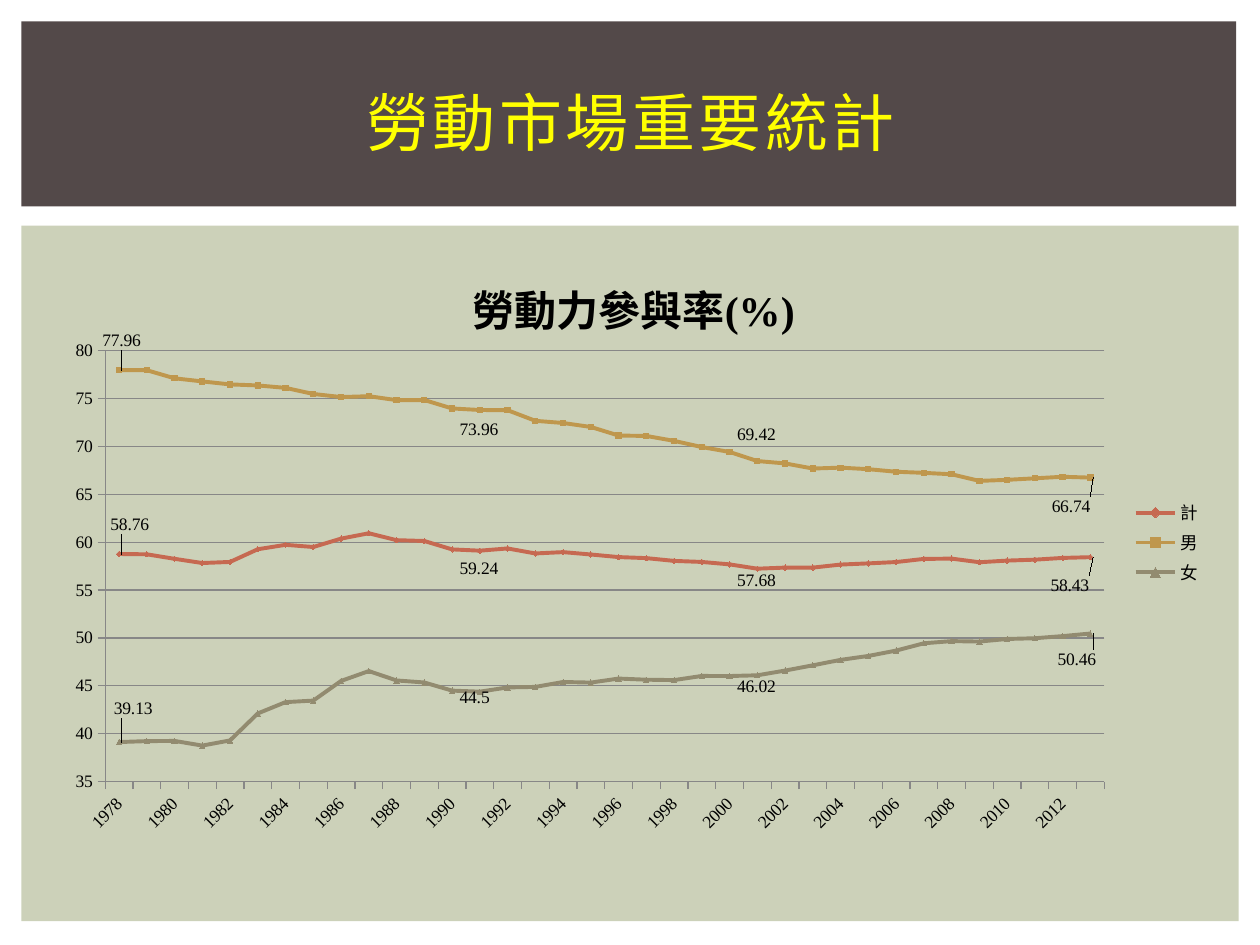
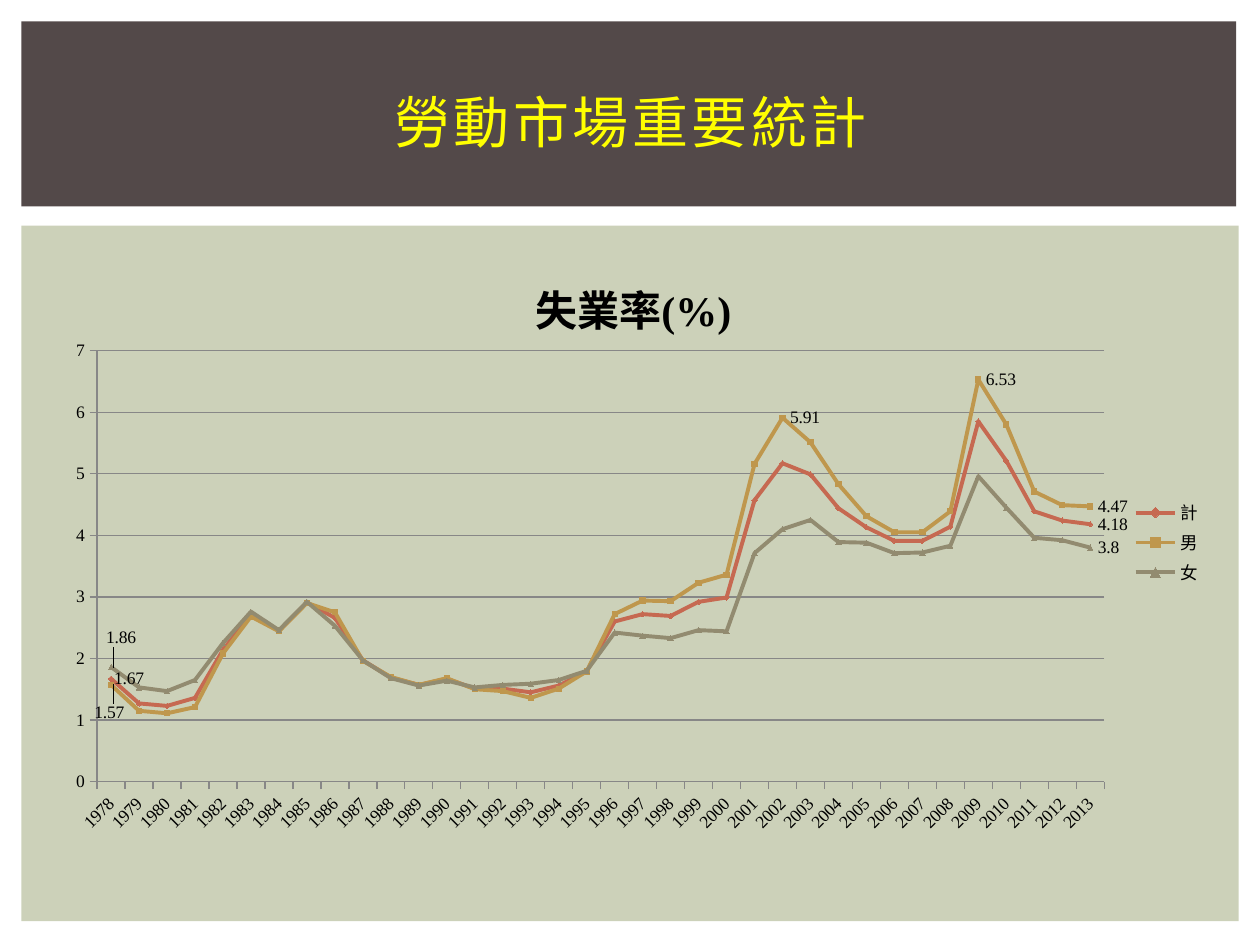
"""Builds two slides on labour market statistics, each with one line chart."""
from dataclasses import dataclass
from typing import NamedTuple

from lxml import etree
from pptx import Presentation
from pptx import util as u
from pptx.chart import data as chart_data
from pptx.dml import color
from pptx.enum import chart as ch, shapes, text
from pptx.oxml import ns, parse_xml

COLORS = {
    "header": "534949", "panel": "CCD1B9", "heading": "FFFF00", "ink": "000000",
    "grid": "878787", "total": "C66951", "men": "BF974D", "women": "928B70",
}
HEADING_FONT = "Noto Sans CJK SC"
CHART_FONT = "Times New Roman"
HEADING = "勞動市場重要統計"
FIRST_YEAR, LAST_YEAR = 1978, 2013


class Box(NamedTuple):
    """A position and size in centimetres."""
    left: float
    top: float
    width: float
    height: float

    def lengths(self) -> list[u.Cm]:
        """Return the four values as lengths."""
        return [u.Cm(value) for value in self]


class Band(NamedTuple):
    """A coloured background rectangle."""
    box: Box
    fill: str


class Group(NamedTuple):
    """How one part of the population is drawn."""
    name: str
    color: str
    marker: ch.XL_MARKER_STYLE


class Callout(NamedTuple):
    """A value label, moved by percentages of the chart size."""
    year: int
    dx: float = 0
    dy: float = 0


@dataclass
class RateSlide:
    """The content of one statistics slide."""
    heading_size: int
    rate_name: str
    name_left: float
    plot_left: float
    plot_width: float
    low: int
    high: int
    step: int
    year_skip: int
    rates: list[list[float]]
    callouts: list[list[Callout]]


BANDS = [
    Band(Box(0.43, 4.55, 24.54, 14.02), "panel"),
    Band(Box(0.43, 0.43, 24.49, 3.73), "header"),
]
HEADING_BOX = Box(1.07, 0.99, 23.29, 2.92)
CHART_BOX = Box(1.07, 4.78, 23.34, 12.24)
GROUPS = [
    Group("計", "total", ch.XL_MARKER_STYLE.DIAMOND),
    Group("男", "men", ch.XL_MARKER_STYLE.SQUARE),
    Group("女", "women", ch.XL_MARKER_STYLE.TRIANGLE),
]
PARTICIPATION = RateSlide(
    36, "勞動力參與率(%)", 35.6, 4.5, 86.3, 35, 80, 5, 2,
    [
        [58.76, 58.73, 58.26, 57.82, 57.93, 59.26, 59.72, 59.49, 60.37, 60.93, 60.21, 60.12,
         59.24, 59.11, 59.34, 58.82, 58.96, 58.71, 58.44, 58.33, 58.04, 57.93, 57.68, 57.23,
         57.34, 57.34, 57.66, 57.78, 57.92, 58.25, 58.28, 57.9, 58.07, 58.17, 58.35, 58.43],
        [77.96, 77.95, 77.11, 76.78, 76.47, 76.36, 76.11, 75.47, 75.15, 75.24, 74.83, 74.84,
         73.96, 73.8, 73.78, 72.67, 72.44, 72.03, 71.13, 71.09, 70.58, 69.93, 69.42, 68.47,
         68.22, 67.69, 67.78, 67.62, 67.35, 67.24, 67.09, 66.4, 66.51, 66.67, 66.83, 66.74],
        [39.13, 39.23, 39.25, 38.76, 39.3, 42.12, 43.3, 43.46, 45.51, 46.54, 45.56, 45.35,
         44.5, 44.39, 44.83, 44.89, 45.4, 45.34, 45.76, 45.64, 45.6, 46.03, 46.02, 46.1,
         46.59, 47.14, 47.71, 48.12, 48.68, 49.44, 49.67, 49.62, 49.89, 49.97, 50.19, 50.46],
    ],
    [
        [Callout(1978, -1.4, -4.8), Callout(1990, 0, 3.1),
         Callout(2000, 0, 2.6), Callout(2013, -4.1, 4.6)],
        [Callout(1978, -2.1, -4.8), Callout(1990, 0, 3.5),
         Callout(2000, 0, -2.8), Callout(2013, -4, 4.8)],
        [Callout(1978, -1.1, -5.6), Callout(1990, 0, 1.2),
         Callout(2000, 0, 1.8), Callout(2013, -3.5, 4.3)],
    ],
)
UNEMPLOYMENT = RateSlide(
    32, "失業率(%)", 41, 3.8, 87, 0, 7, 1, 1,
    [
        [1.67, 1.27, 1.23, 1.36, 2.14, 2.71, 2.45, 2.91, 2.66, 1.97, 1.69, 1.57,
         1.67, 1.51, 1.51, 1.45, 1.56, 1.79, 2.6, 2.72, 2.69, 2.92, 2.99, 4.57,
         5.17, 4.99, 4.44, 4.13, 3.91, 3.91, 4.14, 5.85, 5.21, 4.39, 4.24, 4.18],
        [1.57, 1.15, 1.11, 1.21, 2.08, 2.68, 2.44, 2.9, 2.75, 1.96, 1.7, 1.57,
         1.68, 1.5, 1.47, 1.36, 1.51, 1.79, 2.72, 2.94, 2.93, 3.23, 3.36, 5.16,
         5.91, 5.51, 4.83, 4.31, 4.05, 4.05, 4.39, 6.53, 5.8, 4.71, 4.49, 4.47],
        [1.86, 1.53, 1.47, 1.65, 2.25, 2.76, 2.46, 2.92, 2.53, 1.97, 1.68, 1.56,
         1.64, 1.53, 1.57, 1.59, 1.65, 1.8, 2.42, 2.37, 2.33, 2.46, 2.44, 3.71,
         4.1, 4.25, 3.89, 3.88, 3.71, 3.72, 3.83, 4.96, 4.45, 3.96, 3.92, 3.8],
    ],
    [
        [Callout(1978, -0.4, 0), Callout(2013)],
        [Callout(1978, -2.1, 4.6), Callout(2002), Callout(2009), Callout(2013)],
        [Callout(1978, -1.1, -4.8), Callout(2013)],
    ],
)


def rgb(name: str) -> color.RGBColor:
    """Return a named colour."""
    return color.RGBColor.from_string(COLORS[name])


def style_font(font, size: int, ink: str, name: str, bold: bool = False) -> None:
    """Set the face, size, weight and colour of a font."""
    font.name, font.size, font.bold = name, u.Pt(size), bold
    font.color.rgb = rgb(ink)


def set_layout(parent, index: int, **percents: float) -> None:
    """Give a chart part a manual layout in percent of the chart."""
    for former in parent.findall(ns.qn("c:layout")):
        parent.remove(former)
    layout = etree.Element(ns.qn("c:layout"))
    manual = etree.SubElement(layout, ns.qn("c:manualLayout"))
    if "w" in percents:
        etree.SubElement(manual, ns.qn("c:layoutTarget"), val="inner")
    if parent.tag != ns.qn("c:dLbl"):
        for mode in ("xMode", "yMode"):
            etree.SubElement(manual, ns.qn(f"c:{mode}"), val="edge")
    for key, percent in percents.items():
        etree.SubElement(manual, ns.qn(f"c:{key}"), val=f"{percent / 100:.4f}")
    parent.insert(index, layout)


def clear_background(chart) -> None:
    """Make the chart and plot areas transparent."""
    chart_part = chart._chartSpace.find(ns.qn("c:chart"))
    no_fill = f"<c:spPr {ns.nsdecls('c', 'a')}><a:noFill/><a:ln><a:noFill/></a:ln></c:spPr>"
    chart_part.addnext(parse_xml(no_fill))
    chart_part.find(ns.qn("c:plotArea")).append(parse_xml(no_fill))


def style_axes(chart, content: RateSlide) -> None:
    """Format the year axis and the rate axis."""
    years, rates = chart.category_axis, chart.value_axis
    rates.minimum_scale, rates.maximum_scale = content.low, content.high
    rates.major_unit = content.step
    rates.has_major_gridlines = True
    for axis in (years, rates):
        axis.major_tick_mark = ch.XL_TICK_MARK.OUTSIDE
        axis.minor_tick_mark = ch.XL_TICK_MARK.NONE
        style_font(axis.tick_labels.font, 10, "ink", CHART_FONT)
    for line in (years.format.line, rates.format.line, rates.major_gridlines.format.line):
        line.color.rgb, line.width = rgb("grid"), u.Pt(0.75)
    axis_xml = years._element
    axis_xml.find(ns.qn("c:txPr")).find(ns.qn("a:bodyPr")).set("rot", "-2700000")
    last_setting = axis_xml.find(ns.qn("c:noMultiLvlLbl"))
    for tag, skip in (("tickLblSkip", content.year_skip), ("tickMarkSkip", 1)):
        last_setting.addprevious(etree.Element(ns.qn(f"c:{tag}"), val=str(skip)))


def style_series(series, group: Group, callouts: list[Callout]) -> None:
    """Colour one line and label its chosen years."""
    series.smooth = False
    series.format.line.color.rgb = rgb(group.color)
    series.format.line.width = u.Pt(2.25)
    series.marker.style, series.marker.size = group.marker, 3
    series.marker.format.fill.solid()
    series.marker.format.fill.fore_color.rgb = rgb(group.color)
    series.marker.format.line.color.rgb = rgb(group.color)
    series.data_labels.show_value = False
    for callout in callouts:
        label = series.points[callout.year - FIRST_YEAR].data_label
        label.position = ch.XL_LABEL_POSITION.RIGHT
        if callout.dx or callout.dy:
            set_layout(label._dLbl, 1, x=callout.dx, y=callout.dy)
    labels_xml = series.data_labels._element
    for former in labels_xml.findall(ns.qn("c:showLeaderLines")):
        labels_xml.remove(former)
    etree.SubElement(labels_xml, ns.qn("c:showLeaderLines"), val="1")


def add_rate_chart(slide, content: RateSlide) -> None:
    """Draw the rates of all groups as a line chart."""
    table = chart_data.CategoryChartData()
    table.categories = [str(year) for year in range(FIRST_YEAR, LAST_YEAR + 1)]
    for group, rates in zip(GROUPS, content.rates):
        table.add_series(group.name, rates)
    chart = slide.shapes.add_chart(
        ch.XL_CHART_TYPE.LINE_MARKERS, *CHART_BOX.lengths(), table).chart
    style_font(chart.font, 10, "ink", CHART_FONT)
    chart.plots[0].vary_by_categories = False
    clear_background(chart)

    chart.has_title = True
    name_run = chart.chart_title.text_frame.paragraphs[0].add_run()
    name_run.text = content.rate_name
    style_font(name_run.font, 24, "ink", CHART_FONT, bold=True)
    set_layout(chart.chart_title._element, 1, x=content.name_left, y=4.7)

    chart.has_legend = True
    chart.legend.position = ch.XL_LEGEND_POSITION.RIGHT
    chart.legend.include_in_layout = False
    set_layout(chart.legend._element, 1, x=93, y=42.5)

    plot_area = chart._chartSpace.find(ns.qn("c:chart")).find(ns.qn("c:plotArea"))
    set_layout(plot_area, 0, x=content.plot_left, y=18.7, w=content.plot_width, h=71)
    style_axes(chart, content)
    for series, group, callouts in zip(chart.plots[0].series, GROUPS, content.callouts):
        style_series(series, group, callouts)


def add_band(slide, band: Band) -> None:
    """Draw a background band behind the heading."""
    rectangle = slide.shapes.add_shape(shapes.MSO_SHAPE.RECTANGLE, *band.box.lengths())
    rectangle.shadow.inherit = False
    rectangle.fill.solid()
    rectangle.fill.fore_color.rgb = rgb(band.fill)
    rectangle.line.fill.background()
    slide.shapes.title._element.addprevious(rectangle._element)


def add_heading(slide, size: int) -> None:
    """Place and format the slide heading."""
    heading = slide.shapes.title
    heading.left, heading.top, heading.width, heading.height = HEADING_BOX.lengths()
    frame = heading.text_frame
    frame.word_wrap = True
    frame.auto_size = text.MSO_AUTO_SIZE.NONE
    frame.vertical_anchor = text.MSO_ANCHOR.MIDDLE
    frame.paragraphs[0].alignment = text.PP_ALIGN.CENTER
    run = frame.paragraphs[0].add_run()
    run.text = HEADING
    style_font(run.font, size, "heading", HEADING_FONT)
    properties = run.font._element
    properties.set("spc", "200")
    properties.find(ns.qn("a:latin")).addnext(
        etree.Element(ns.qn("a:ea"), typeface=HEADING_FONT))


def main() -> None:
    """Build and save the presentation."""
    deck = Presentation()
    deck.slide_width, deck.slide_height = u.Cm(25.4), u.Cm(19.05)
    for content in (PARTICIPATION, UNEMPLOYMENT):
        slide = deck.slides.add_slide(deck.slide_layouts.get_by_name("Title Only"))
        for band in BANDS:
            add_band(slide, band)
        add_heading(slide, content.heading_size)
        add_rate_chart(slide, content)
    deck.save("out.pptx")


if __name__ == "__main__":
    main()
